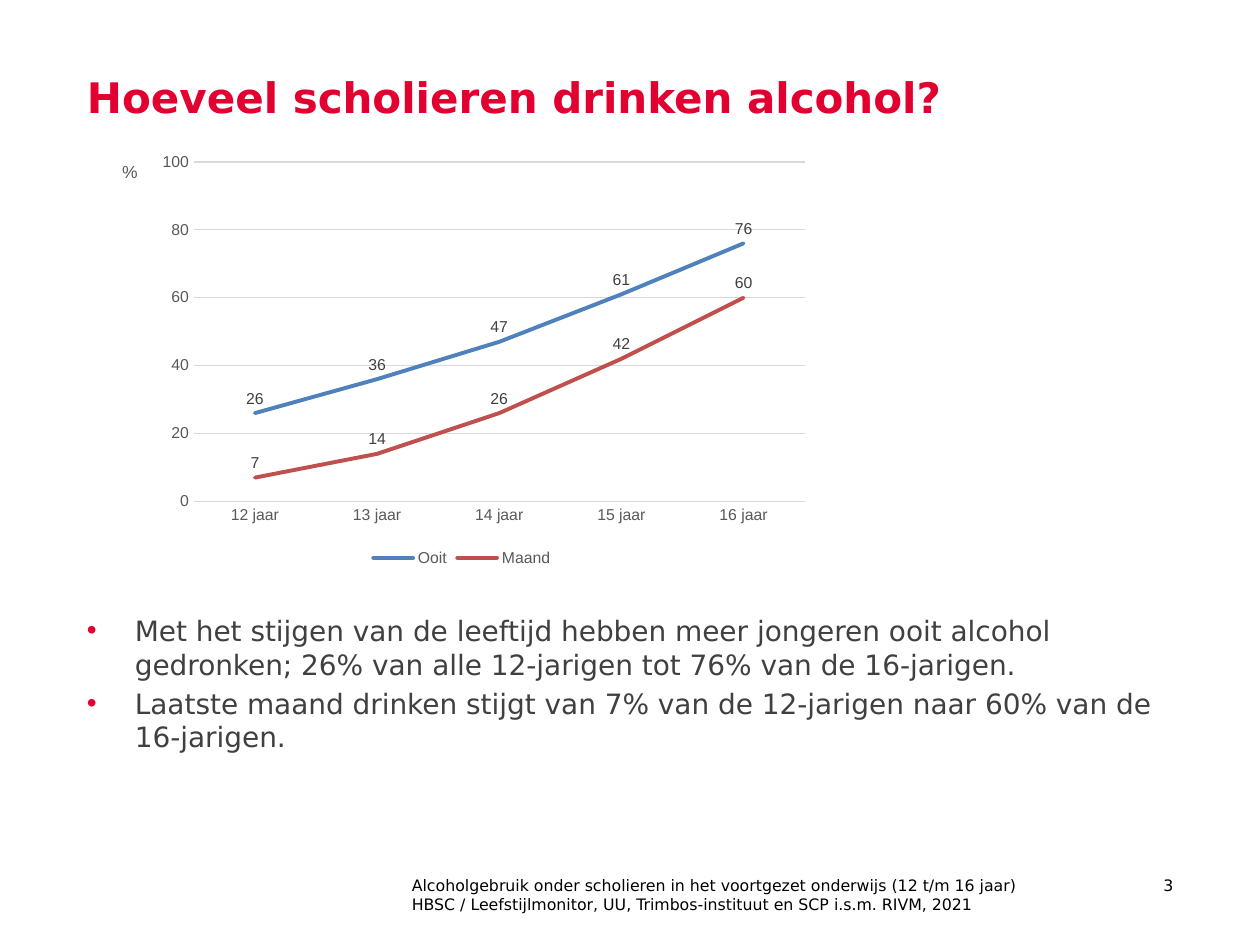
from lxml.etree import SubElement
from pptx import Presentation
from pptx.chart.data import CategoryChartData
from pptx.dml.color import RGBColor
from pptx.enum.chart import (XL_CHART_TYPE, XL_LABEL_POSITION,
                             XL_LEGEND_POSITION, XL_TICK_MARK)
from pptx.enum.text import MSO_ANCHOR, MSO_AUTO_SIZE, PP_ALIGN
from pptx.oxml import parse_xml
from pptx.oxml.ns import nsdecls, qn
from pptx.util import Inches, Pt

RED = RGBColor(0xE2, 0x00, 0x31)
BLACK = RGBColor(0x00, 0x00, 0x00)
DARK_GRAY = RGBColor(0x40, 0x40, 0x40)
AXIS_GRAY = RGBColor(0x59, 0x59, 0x59)
GRID_GRAY = RGBColor(0xD9, 0xD9, 0xD9)
BLUE = RGBColor(0x4F, 0x81, 0xBD)
BRICK = RGBColor(0xC0, 0x50, 0x4D)
TEXT_FONT = "DejaVu Sans"
CHART_FONT = "Arial"

AGES = ["12 jaar", "13 jaar", "14 jaar", "15 jaar", "16 jaar"]
DRINKERS = [
    ("Ooit", (26, 36, 47, 61, 76), BLUE),
    ("Maand", (7, 14, 26, 42, 60), BRICK),
]
FINDINGS = [
    "Met het stijgen van de leeftijd hebben meer jongeren ooit alcohol "
    "gedronken; 26% van alle 12-jarigen tot 76% van de 16-jarigen.",
    "Laatste maand drinken stijgt van 7% van de 12-jarigen naar 60% van de "
    "16-jarigen.",
]
SOURCE = [
    "Alcoholgebruik onder scholieren in het voortgezet onderwijs (12 t/m 16 jaar)",
    "HBSC / Leefstijlmonitor, UU, Trimbos-instituut en SCP i.s.m. RIVM, 2021",
]


def place(shape, box):
    shape.left, shape.top, shape.width, shape.height = map(Inches, box)


def style_font(font, size, color, name=CHART_FONT, bold=False):
    font.size = Pt(size)
    font.name = name
    font.bold = bold
    font.color.rgb = color


def fill_text(frame, lines, size, color, bold=False, align=PP_ALIGN.LEFT):
    frame.text = "\n".join(lines)
    frame.word_wrap = True
    frame.auto_size = MSO_AUTO_SIZE.NONE
    frame.vertical_anchor = MSO_ANCHOR.TOP
    for paragraph in frame.paragraphs:
        paragraph.alignment = align
        for run in paragraph.runs:
            style_font(run.font, size, color, TEXT_FONT, bold)


def set_layout(parent, index, **fractions):
    for old in parent.findall(qn("c:layout")):
        parent.remove(old)
    layout = parse_xml(f"<c:layout {nsdecls('c')}><c:manualLayout/></c:layout>")
    for tag, value in fractions.items():
        SubElement(layout[0], qn(f"c:{tag}")).set("val", str(value))
    parent.insert(index, layout)


def add_title(slide, box):
    title = slide.shapes.title
    place(title, box)
    fill_text(title.text_frame, ["Hoeveel scholieren drinken alcohol?"],
              24, RED, bold=True)


def add_findings(slide, box):
    findings = slide.placeholders[1]
    place(findings, box)
    fill_text(findings.text_frame, FINDINGS, 16, DARK_GRAY)
    for number, paragraph in enumerate(findings.text_frame.paragraphs):
        paragraph.space_before = Pt(3.2 if number else 0)
        properties = paragraph._p.get_or_add_pPr()
        properties.set("marL", str(Inches(0.38)))
        properties.set("indent", str(Inches(-0.38)))
        bullet_color = SubElement(properties, qn("a:buClr"))
        SubElement(bullet_color, qn("a:srgbClr")).set("val", str(RED))
        SubElement(properties, qn("a:buChar")).set("char", "•")


def style_axes(chart):
    ages, percent = chart.category_axis, chart.value_axis
    for axis in (ages, percent):
        axis.major_tick_mark = axis.minor_tick_mark = XL_TICK_MARK.NONE
        style_font(axis.tick_labels.font, 9, AXIS_GRAY)
    percent.minimum_scale, percent.maximum_scale = 0, 100
    percent.major_unit = 20
    percent.tick_labels.number_format = "0"
    percent.tick_labels.number_format_is_linked = False
    percent.format.line.fill.background()
    for line in (ages.format.line, percent.major_gridlines.format.line):
        line.color.rgb = GRID_GRAY
        line.width = Pt(0.75)

    unit = percent.axis_title
    unit.text_frame.text = "%"
    style_font(unit.text_frame.paragraphs[0].runs[0].font, 10, AXIS_GRAY)
    unit.text_frame._txBody.bodyPr.set("rot", "0")
    set_layout(unit._element, 1, xMode="edge", yMode="edge", x=0.02, y=0.03)


def add_drinkers_chart(slide, box):
    data = CategoryChartData(number_format="0")
    data.categories = AGES
    for name, values, _ in DRINKERS:
        data.add_series(name, values)
    chart = slide.shapes.add_chart(
        XL_CHART_TYPE.LINE, *map(Inches, box), data).chart
    style_font(chart.font, 10, BLACK)
    chart.has_title = False
    chart.has_legend = True
    chart.legend.position = XL_LEGEND_POSITION.BOTTOM
    chart.legend.include_in_layout = False
    style_font(chart.legend.font, 9, AXIS_GRAY)
    style_axes(chart)

    plot = chart.plots[0]
    plot.vary_by_categories = False
    for series, (_, _, color) in zip(plot.series, DRINKERS):
        series.smooth = False
        series.format.line.color.rgb = color
        series.format.line.width = Pt(2.25)
        series._element.find(f"{qn('c:spPr')}/{qn('a:ln')}").set("cap", "rnd")
        labels = series.data_labels
        labels.show_value = True
        labels.position = XL_LABEL_POSITION.ABOVE
        labels.number_format = "0"
        labels.number_format_is_linked = False
        style_font(labels.font, 9, DARK_GRAY)

    set_layout(chart._chartSpace.chart.plotArea, 0, layoutTarget="inner",
               xMode="edge", yMode="edge", x=0.125, y=0.04, w=0.855, h=0.795)


def add_footer_text(slide, box, lines, align=PP_ALIGN.LEFT):
    footer = slide.shapes.add_textbox(*map(Inches, box))
    fill_text(footer.text_frame, lines, 9, BLACK, align=align)


def main():
    deck = Presentation()
    deck.slide_width, deck.slide_height = Inches(10), Inches(7.5)
    slide = deck.slides.add_slide(deck.slide_layouts[1])
    add_footer_text(slide, (3.17, 6.9, 5.69, 0.4), SOURCE)
    add_footer_text(slide, (8.62, 6.9, 0.79, 0.4), ["3"], PP_ALIGN.RIGHT)
    add_title(slide, (0.59, 0.52, 8.82, 1.26))
    add_findings(slide, (0.59, 4.82, 8.82, 1.44))
    add_drinkers_chart(slide, (0.83, 1.15, 5.67, 3.39))
    deck.save("out.pptx")


if __name__ == "__main__":
    main()
